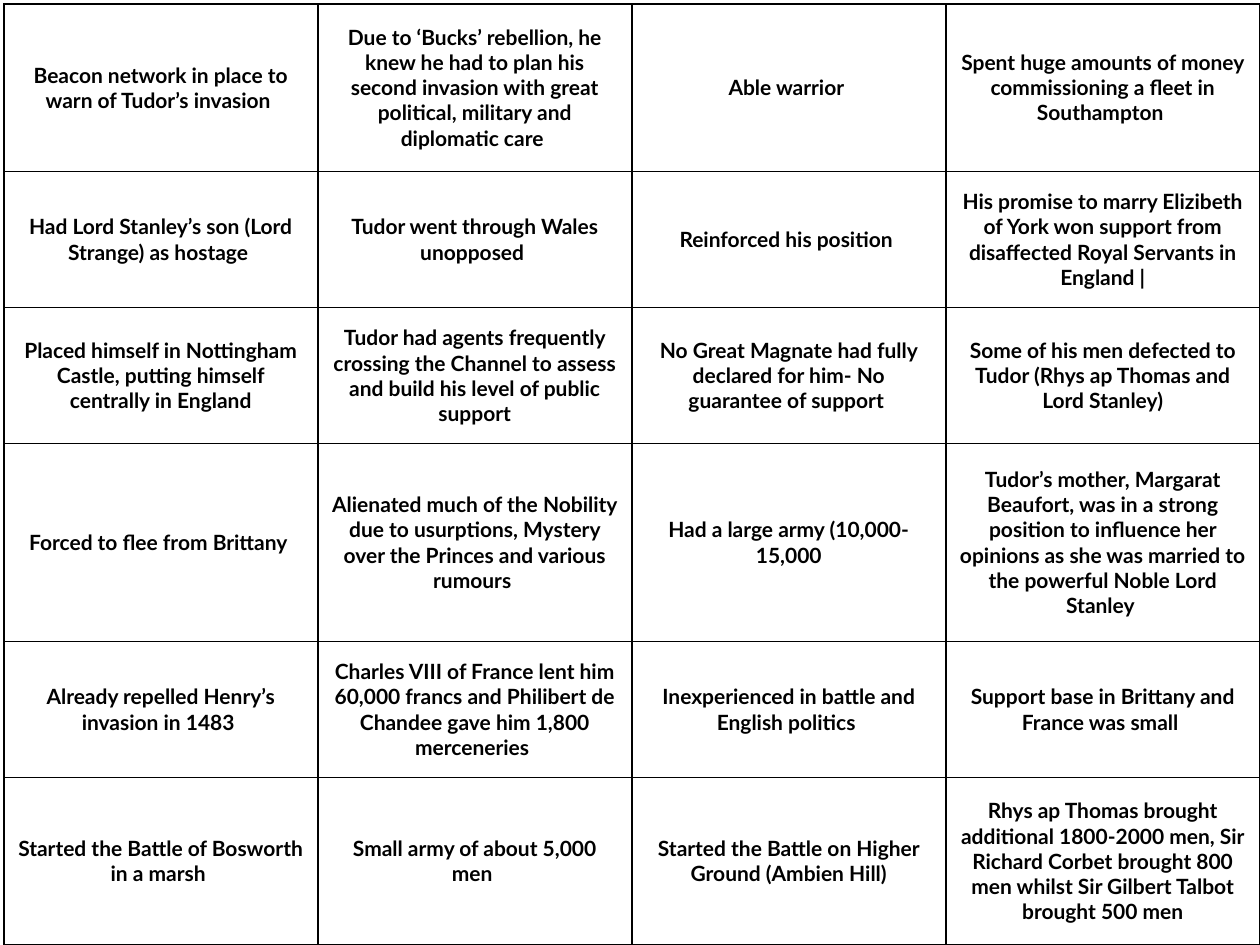
import pptx
import pptx.dml.color
import pptx.enum.text
import pptx.oxml
import pptx.oxml.ns
import pptx.util
from pptx.util import Inches

# Content: one tuple per table row
FACTORS = [
    ("Beacon network in place to warn of Tudor’s invasion ",
     "Due to ‘Bucks’ rebellion, he knew he had to plan his second invasion "
     "with great political, military and diplomatic care ",
     "Able warrior ",
     "Spent huge amounts of money commissioning a fleet in Southampton "),
    ("Had Lord Stanley’s son (Lord Strange) as hostage ",
     "Tudor went through Wales unopposed ",
     "Reinforced his position ",
     "His promise to marry Elizibeth of York won support from disaffected "
     "Royal Servants in England |"),
    ("Placed himself in Nottingham Castle, putting himself centrally in England",
     "Tudor had agents frequently crossing the Channel to assess and build "
     "his level of public support",
     "No Great Magnate had fully declared for him- No guarantee of support ",
     "Some of his men defected to Tudor (Rhys ap Thomas and Lord Stanley)"),
    ("Forced to flee from Brittany ",
     "Alienated much of the Nobility due to usurptions, Mystery over the "
     "Princes and various rumours ",
     "Had a large army (10,000-15,000",
     "Tudor’s mother, Margarat Beaufort, was in a strong position to influence "
     "her opinions as she was married to the powerful Noble Lord Stanley "),
    ("Already repelled Henry’s invasion in 1483 ",
     "Charles VIII of France lent him 60,000 francs and Philibert de Chandee "
     "gave him 1,800 merceneries ",
     "Inexperienced in battle and English politics ",
     "Support base in Brittany and France was small "),
    ("Started the Battle of Bosworth in a marsh ",
     "Small army of about 5,000 men ",
     "Started the Battle on Higher Ground (Ambien Hill)",
     "Rhys ap Thomas brought additional 1800-2000 men, Sir Richard Corbet "
     "brought 800 men whilst Sir Gilbert Talbot brought 500 men"),
]
ROW_HEIGHTS = [1.33, 1.08, 1.08, 1.57, 1.08, 1.33]
MARGIN, TABLE_WIDTH = 0.03, 9.97

THEME = {
    "ink": pptx.dml.color.RGBColor(0, 0, 0),
    "paper": pptx.dml.color.RGBColor(255, 255, 255),
    "font": {"name": "Lato", "size": pptx.util.Pt(12), "bold": True},
    "border": pptx.util.Pt(1),
}


def add_borders(cell):
    """Draw all four cell edges; they must precede the fill in the cell XML."""
    properties = cell._tc.get_or_add_tcPr()
    for position, edge in enumerate(("lnL", "lnR", "lnT", "lnB")):
        properties.insert(position, pptx.oxml.parse_xml(
            f'<a:{edge} {pptx.oxml.ns.nsdecls("a")} w="{THEME["border"]}">'
            f'<a:solidFill><a:srgbClr val="{THEME["ink"]}"/></a:solidFill>'
            f'</a:{edge}>'))


def fill_cell(cell, text):
    cell.fill.solid()
    cell.fill.fore_color.rgb = THEME["paper"]
    cell.vertical_anchor = pptx.enum.text.MSO_ANCHOR.MIDDLE
    para = cell.text_frame.paragraphs[0]
    para.alignment = pptx.enum.text.PP_ALIGN.CENTER
    span = para.add_run()
    span.text = text
    for name, value in THEME["font"].items():
        setattr(span.font, name, value)
    span.font.color.rgb = THEME["ink"]
    add_borders(cell)


def main():
    deck = pptx.Presentation()
    deck.slide_width, deck.slide_height = Inches(10), Inches(7.5)
    page = deck.slides.add_slide(deck.slide_layouts[6])

    # Table grid: equal columns, set row heights
    columns = len(FACTORS[0])
    table = page.shapes.add_table(
        len(FACTORS), columns, Inches(MARGIN), Inches(MARGIN),
        Inches(TABLE_WIDTH), Inches(sum(ROW_HEIGHTS))).table
    table.first_row = table.horz_banding = False
    for column in table.columns:
        column.width = Inches(TABLE_WIDTH / columns)

    # Cells
    for row, height, texts in zip(table.rows, ROW_HEIGHTS, FACTORS):
        row.height = Inches(height)
        for cell, text in zip(row.cells, texts):
            fill_cell(cell, text)

    deck.save("out.pptx")


if __name__ == "__main__":
    main()
